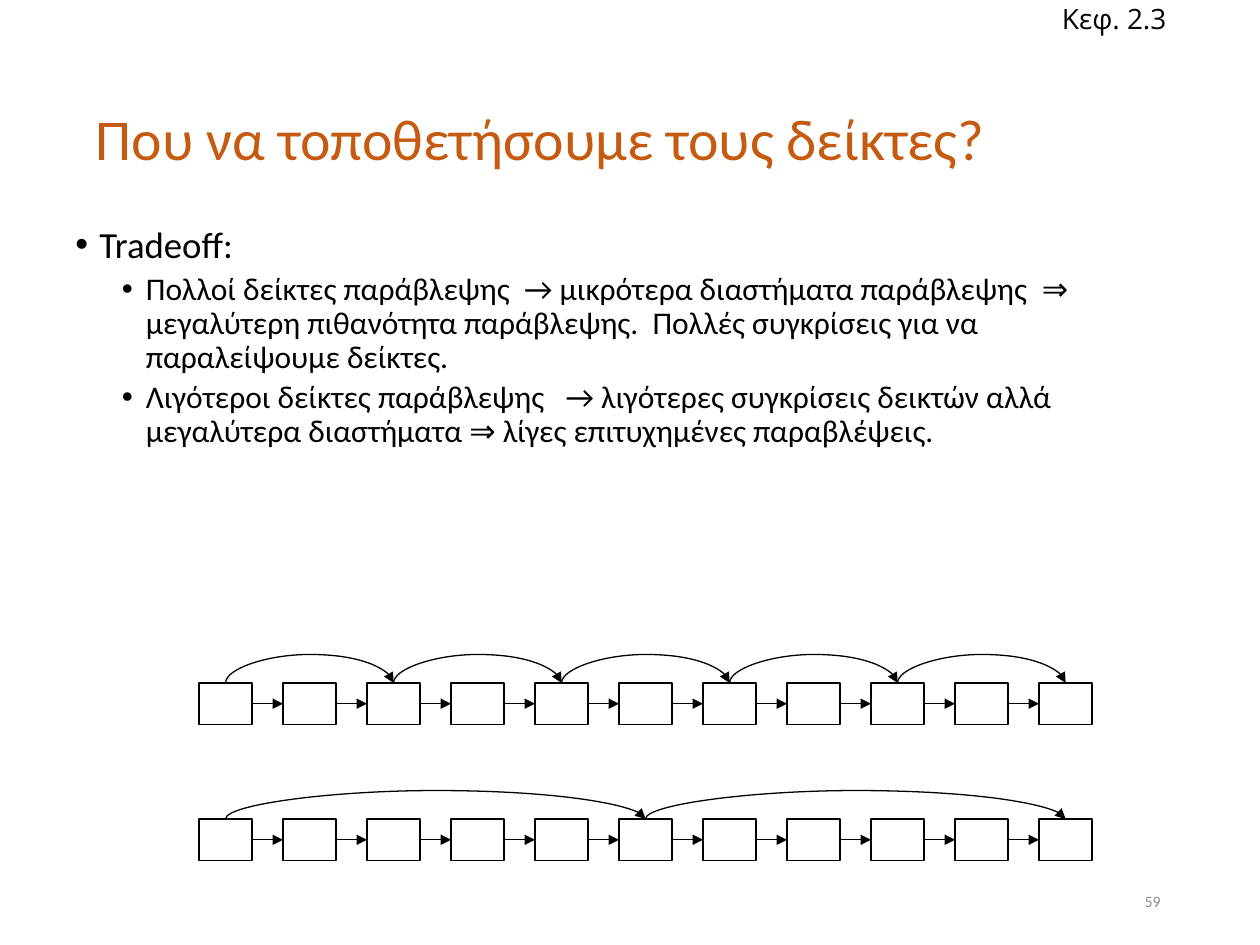
from lxml import etree
from pptx import Presentation
from pptx.dml.color import RGBColor
from pptx.enum.shapes import MSO_CONNECTOR, MSO_SHAPE
from pptx.enum.text import MSO_ANCHOR, PP_ALIGN
from pptx.oxml.ns import qn
from pptx.util import Emu, Inches, Pt

RECTANGLE = MSO_SHAPE.RECTANGLE
STRAIGHT = MSO_CONNECTOR.STRAIGHT
CURVE = MSO_CONNECTOR.CURVE
LEFT, RIGHT = PP_ALIGN.LEFT, PP_ALIGN.RIGHT
TOP, MIDDLE = MSO_ANCHOR.TOP, MSO_ANCHOR.MIDDLE

COLORS = {"title": "C55A11", "text": "000000", "number": "8C8C8C", "line": "000000"}

NODE_COUNT = 11
NODE_LEFT = 1.58
NODE_PITCH = 2 / 3
NODE_WIDTH = 0.42
NODE_HEIGHT = 0.33
SKIP_RISE = Inches(0.25)
SKIP_THICKNESS = Emu(1600)

LISTS = [(5.42, 2), (6.5, 5)]

BULLETS = [
    (0, "Tradeoff:"),
    (1, "Πολλοί δείκτες παράβλεψης  → μικρότερα διαστήματα παράβλεψης  ⇒ "
        "μεγαλύτερη πιθανότητα παράβλεψης.  Πολλές συγκρίσεις για να "
        "παραλείψουμε δείκτες."),
    (1, "Λιγότεροι δείκτες παράβλεψης   → λιγότερες συγκρίσεις δεικτών αλλά "
        "μεγαλύτερα διαστήματα ⇒ λίγες επιτυχημένες παραβλέψεις."),
]
LEVELS = [(21, 7.5, 0.19), (18, 3.8, 0.56)]
HANGING = 0.19


def style_font(paragraph, size, color, name="Calibri"):
    font = paragraph.font
    font.name = name
    font.size = Pt(size)
    font.color.rgb = RGBColor.from_string(COLORS[color])


def add_title(slide, text):
    title = slide.shapes.title
    title.left, title.top = Inches(0.69), Inches(0.4)
    title.width, title.height = Inches(8.62), Inches(1.45)
    frame = title.text_frame
    frame.text = text
    frame.vertical_anchor = MIDDLE
    frame.margin_left = frame.margin_right = Inches(0.07)
    paragraph = frame.paragraphs[0]
    paragraph.alignment = LEFT
    paragraph.line_spacing = 0.9
    style_font(paragraph, 33, "title")


def add_text_box(slide, left, top, width, height, anchor=MIDDLE, wrap=True):
    box = slide.shapes.add_textbox(
        Inches(left), Inches(top), Inches(width), Inches(height))
    frame = box.text_frame
    frame.word_wrap = wrap
    frame.vertical_anchor = anchor
    return frame


def add_label(slide, text, bounds, size, color, name="Calibri", alignment=LEFT, wrap=True):
    paragraph = add_text_box(slide, *bounds, wrap=wrap).paragraphs[0]
    paragraph.text = text
    paragraph.alignment = alignment
    style_font(paragraph, size, color, name)


def add_bullets(slide):
    frame = add_text_box(slide, 0.5, 1.75, 8.75, 2.63, anchor=TOP)
    for index, (level, text) in enumerate(BULLETS):
        paragraph = frame.add_paragraph() if index else frame.paragraphs[0]
        size, space_before, indent = LEVELS[level]
        paragraph.text = text
        paragraph.level = level
        paragraph.line_spacing = 0.9
        paragraph.space_before = Pt(space_before)
        style_font(paragraph, size, "text")
        properties = paragraph._p.get_or_add_pPr()
        properties.set("marL", str(Inches(indent)))
        properties.set("indent", str(-Inches(HANGING)))
        bullet_font = etree.Element(qn("a:buFont"), typeface="Arial")
        bullet = etree.Element(qn("a:buChar"), char="•")
        properties.find(qn("a:defRPr")).addprevious(bullet_font)
        bullet_font.addnext(bullet)


def style_line(line):
    line.color.rgb = RGBColor.from_string(COLORS["line"])
    line.width = Pt(0.75)


def add_node(slide, left, top):
    node = slide.shapes.add_shape(
        RECTANGLE, Inches(left), Inches(top), Inches(NODE_WIDTH), Inches(NODE_HEIGHT))
    node.shadow.inherit = False
    node.fill.background()
    style_line(node.line)
    return node


def add_arrow(slide, kind, *ends):
    arrow = slide.shapes.add_connector(kind, *ends)
    style_line(arrow.line)
    etree.SubElement(arrow.line._get_or_add_ln(), qn("a:tailEnd"), type="triangle")
    etree.SubElement(arrow._element.spPr, qn("a:effectLst"))
    return arrow


def add_link(slide, source, target):
    arrow = add_arrow(slide, STRAIGHT, 0, 0, 0, 0)
    arrow.begin_connect(source, 3)
    arrow.end_connect(target, 1)


def add_skip(slide, source, target):
    start = source.left + source.width // 2
    end = target.left + target.width // 2
    center, half = (start + end) // 2, (end - start) // 2
    arrow = add_arrow(slide, CURVE, center, source.top + half,
                      center + SKIP_THICKNESS, source.top - half)
    properties = arrow._element.spPr
    properties.find(qn("a:xfrm")).set("rot", str(90 * 60000))
    adjustment = -round(SKIP_RISE / SKIP_THICKNESS * 100000)
    guides = properties.find(qn("a:prstGeom")).find(qn("a:avLst"))
    etree.SubElement(guides, qn("a:gd"), name="adj1", fmla=f"val {adjustment}")


def add_skip_list(slide, top, step):
    nodes = [add_node(slide, NODE_LEFT + index * NODE_PITCH, top)
             for index in range(NODE_COUNT)]
    for source, target in zip(nodes, nodes[1:]):
        add_link(slide, source, target)
    stops = nodes[::step]
    for source, target in zip(stops, stops[1:]):
        add_skip(slide, source, target)


def main():
    presentation = Presentation()
    presentation.slide_width = Inches(10)
    presentation.slide_height = Inches(7.5)
    slide = presentation.slides.add_slide(presentation.slide_layouts[5])
    add_title(slide, "Που να τοποθετήσουμε τους δείκτες?")
    add_bullets(slide)
    add_label(slide, "59", (7.06, 6.95, 2.25, 0.4), 9, "number", alignment=RIGHT)
    for top, step in LISTS:
        add_skip_list(slide, top, step)
    add_label(slide, "Κεφ. 2.3", (8.33, -0.04, 1.1, 0.37), 16, "text",
              name="Open Sans", wrap=False)
    presentation.save("out.pptx")


if __name__ == "__main__":
    main()
